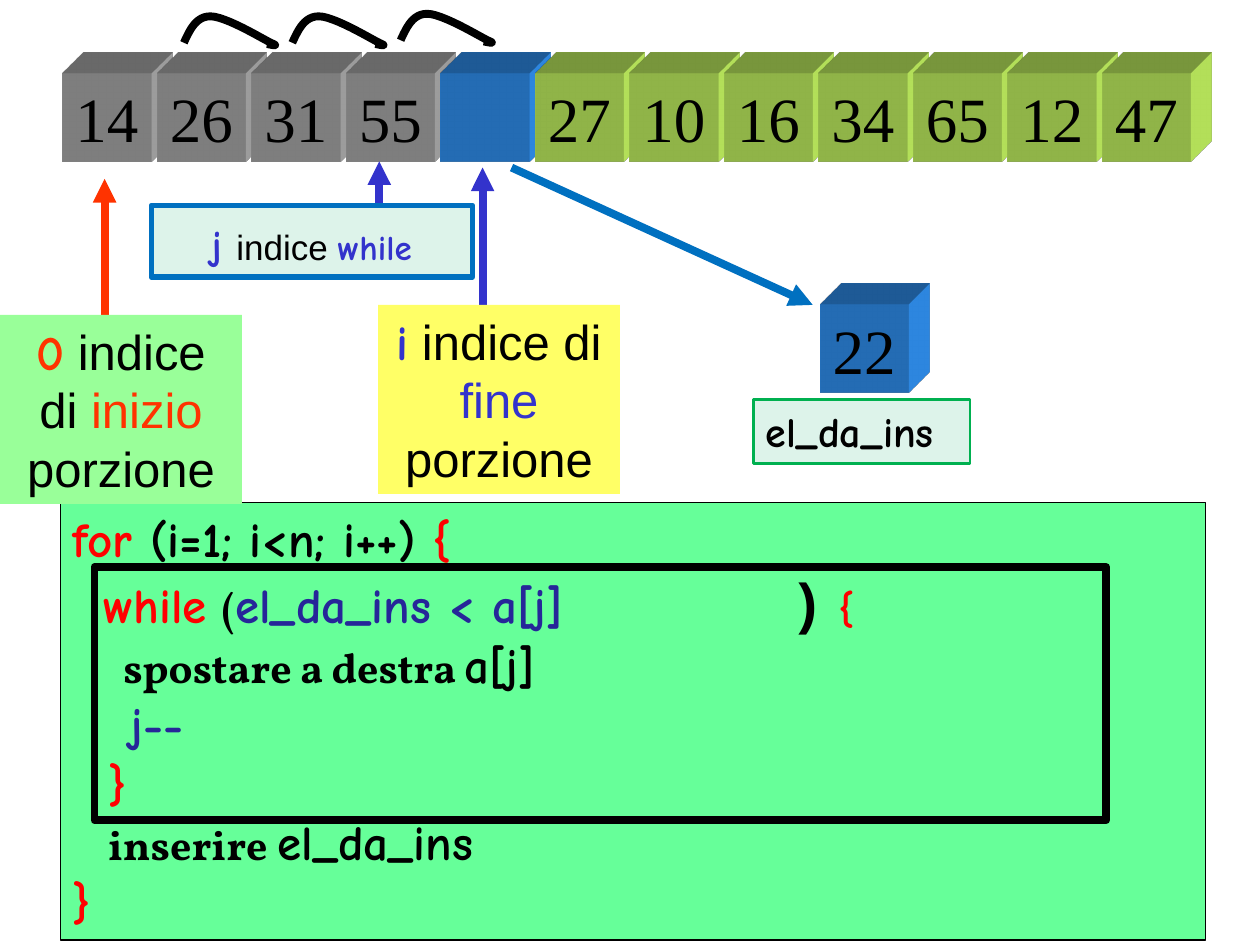
from lxml.etree import SubElement
from pptx import Presentation
from pptx.dml.color import RGBColor
from pptx.enum.shapes import MSO_CONNECTOR, MSO_SHAPE
from pptx.enum.text import MSO_ANCHOR, PP_ALIGN
from pptx.oxml import parse_xml
from pptx.oxml.ns import nsdecls, qn
from pptx.util import Inches, Pt

COMIC, VOLLKORN, ARIAL, COURIER = "Comic Neue", "Vollkorn", "Arial", "Courier New"
TIMES = "Times New Roman"
BLACK, RED, NAVY, INDIGO, ORANGE = "000000", "FF0000", "262699", "3333CC", "FF3300"
GREY, BLUE, LIME = "B2B2B2", "3399FF", "CCFF66"
CUBE_SIZE, CUBE_STEP = 0.7, 0.75
BRACKET_GAP = 120  # points of extra room before the bracket that closes the condition

# Each code line: left indent in inches, then runs of (text, size, font, colour[, spacing])
CODE = [
    (0, [("for ", 28, COMIC, RED), ("(i=1; i<n; i++) ", 28, COMIC, BLACK), ("{", 28, COMIC, RED)]),
    (0.24, [("while", 28, COMIC, RED), (" ", 24, COMIC, RED), ("(", 24, VOLLKORN, BLACK),
            ("el_da_ins < a[j]", 28, COMIC, NAVY), (" ", 28, COMIC, NAVY, BRACKET_GAP),
            (")", 32, COURIER, BLACK), (" {", 24, COMIC, RED)]),
    (0.4, [("spostare a destra ", 24, VOLLKORN, BLACK), ("a[j]", 28, COMIC, BLACK)]),
    (0.46, [("j--", 28, COMIC, NAVY)]),
    (0.28, [("}", 28, COMIC, RED)]),
    (0.28, [("inserire", 24, VOLLKORN, BLACK), (" ", 28, VOLLKORN, BLACK),
            ("el_da_ins", 28, COMIC, BLACK)]),
    (0, [("}", 28, COMIC, RED)]),
]


def rgb(value):
    return RGBColor.from_string(value)


def style_outline(shape, color=None, width=0):
    if color:
        shape.line.color.rgb = rgb(color)
        shape.line.width = Pt(width)
    else:
        shape.line.fill.background()


def add_box(slide, left, top, width, height, fill=None, line=None, line_width=0):
    box = slide.shapes.add_shape(MSO_SHAPE.RECTANGLE, Inches(left), Inches(top),
                                 Inches(width), Inches(height))
    box.shadow.inherit = False
    if fill:
        box.fill.solid()
        box.fill.fore_color.rgb = rgb(fill)
    else:
        box.fill.background()
    style_outline(box, line, line_width)
    box.text_frame.vertical_anchor = MSO_ANCHOR.TOP
    return box


def write_runs(paragraph, runs, alignment=PP_ALIGN.LEFT):
    """Add runs of (text, size, font, colour[, spacing]); all but Arial and Times are bold."""
    paragraph.alignment = alignment
    for text, size, font_name, color, *spacing in runs:
        run = paragraph.add_run()
        run.text = text
        run.font.size = Pt(size)
        run.font.name = font_name
        run.font.color.rgb = rgb(color)
        run.font.bold = font_name not in (ARIAL, TIMES)
        if spacing:
            run._r.get_or_add_rPr().set("spc", str(spacing[0] * 100))


def add_cube(slide, left, top, color, number=""):
    cube = add_box(slide, left, top, CUBE_SIZE, CUBE_SIZE, color)
    properties = cube._element.spPr
    properties.append(parse_xml(
        f'<a:scene3d {nsdecls("a")}><a:camera prst="legacyObliqueTopRight"/>'
        '<a:lightRig rig="legacyFlat3" dir="b"/></a:scene3d>'))
    properties.append(parse_xml(
        f'<a:sp3d {nsdecls("a")} extrusionH="430200" prstMaterial="legacyMatte">'
        '<a:bevelT w="13500" h="13500" prst="angle"/><a:bevelB w="13500" h="13500" prst="angle"/>'
        f'<a:extrusionClr><a:srgbClr val="{color}"/></a:extrusionClr></a:sp3d>'))
    if number:
        cube.text_frame.word_wrap = False
        cube.text_frame.vertical_anchor = MSO_ANCHOR.MIDDLE
        write_runs(cube.text_frame.paragraphs[0], [(number, 36, TIMES, BLACK)])


def add_arrow(slide, start, end, color):
    arrow = slide.shapes.add_connector(MSO_CONNECTOR.STRAIGHT, *map(Inches, start + end))
    style_outline(arrow, color, 4.5)
    SubElement(arrow.line._get_or_add_ln(), qn("a:tailEnd"), type="triangle")
    SubElement(arrow._element.spPr, qn("a:effectLst"))


def add_label(slide, position, fill, runs, line=None, line_width=0):
    label = add_box(slide, *position, fill, line, line_width)
    label.text_frame.word_wrap = True
    write_runs(label.text_frame.paragraphs[0], runs, PP_ALIGN.CENTER)


def bezier_points(start, first, second, end, steps=12):
    for step in range(1, steps + 1):
        t = step / steps
        yield tuple((1 - t) ** 3 * a + 3 * t * (1 - t) ** 2 * b + 3 * t * t * (1 - t) * c + t ** 3 * d
                    for a, b, c, d in zip(start, first, second, end))


def add_hop(slide, left, top):
    """Draw the curved stroke that shows one cell moving right."""
    corners = [(0, 0.21), (0.05, 0.1), (0.1, 0), (0.21, 0), (0.33, 0), (0.61, 0.17),
               (0.69, 0.21), (0.76, 0.24), (0.71, 0.23), (0.66, 0.22)]
    corners = [(Inches(left + x), Inches(top + y)) for x, y in corners]
    points = [point for i in range(0, 9, 3) for point in bezier_points(*corners[i:i + 4])]
    builder = slide.shapes.build_freeform(*corners[0])
    builder.add_line_segments(points, close=False)
    hop = builder.convert_to_shape()
    hop.shadow.inherit = False
    hop.fill.background()
    style_outline(hop, BLACK, 4.5)


def add_code(slide):
    frame = add_box(slide, 0.48, 3.99, 9.09, 3.47, "66FF99", BLACK, 0.75).text_frame
    frame.word_wrap = True
    for index, (indent, runs) in enumerate(CODE):
        paragraph = frame.add_paragraph() if index else frame.paragraphs[0]
        write_runs(paragraph, runs)
        properties = paragraph._p.get_or_add_pPr()
        properties.set("marL", str(Inches(indent)))
        properties.set("indent", "0")


def main():
    presentation = Presentation()
    presentation.slide_width, presentation.slide_height = Inches(10), Inches(7.5)
    slide = presentation.slides.add_slide(presentation.slide_layouts[6])

    add_code(slide)
    numbers = ["14", "26", "31", "55", "", "27", "10", "16", "34", "65", "12", "47"]
    colors = [GREY] * 4 + [BLUE] + [LIME] * 7
    for index, (number, color) in enumerate(zip(numbers, colors)):
        add_cube(slide, 0.5 + index * CUBE_STEP, 0.58, color, number)

    add_arrow(slide, (0.83, 2.5), (0.83, 1.42), ORANGE)
    add_label(slide, (0, 2.5, 1.92, 1.5), "99FF99",
              [("0", 28, COMIC, ORANGE), (" indice di ", 28, ARIAL, BLACK),
               ("inizio ", 28, ARIAL, ORANGE), ("porzione", 28, ARIAL, BLACK)])
    add_arrow(slide, (3.83, 2.42), (3.83, 1.33), INDIGO)
    add_label(slide, (3, 2.42, 1.92, 1.5), "FFFF66",
              [("i", 28, COMIC, INDIGO), (" indice di ", 28, ARIAL, BLACK),
               ("fine", 28, ARIAL, INDIGO), (" porzione", 28, ARIAL, BLACK)])

    add_cube(slide, 6.51, 2.42, BLUE, "22")
    add_box(slide, 0.75, 4.5, 8.03, 2.01, line=BLACK, line_width=4.5)
    element = add_box(slide, 5.98, 3.17, 1.72, 0.51, "DDF3EA", "00B050", 1.5)
    element.text_frame.word_wrap = False
    write_runs(element.text_frame.paragraphs[0], [("el_da_ins", 24, COMIC, BLACK)])
    add_arrow(slide, (4.06, 1.33), (6.45, 2.42), "0070C0")

    add_arrow(slide, (3.01, 1.66), (3.01, 1.28), INDIGO)
    add_label(slide, (1.2, 1.63, 2.55, 0.57), "DDF3EA",
              [("j", 24, COMIC, INDIGO), (" ", 28, ARIAL, BLACK),
               ("indice ", 20, ARIAL, BLACK), ("while", 20, COMIC, INDIGO)], "0070C0", 3)

    for left, top in [(3.18, 0.11), (2.32, 0.13), (1.46, 0.13)]:
        add_hop(slide, left, top)
    presentation.save("out.pptx")


if __name__ == "__main__":
    main()
